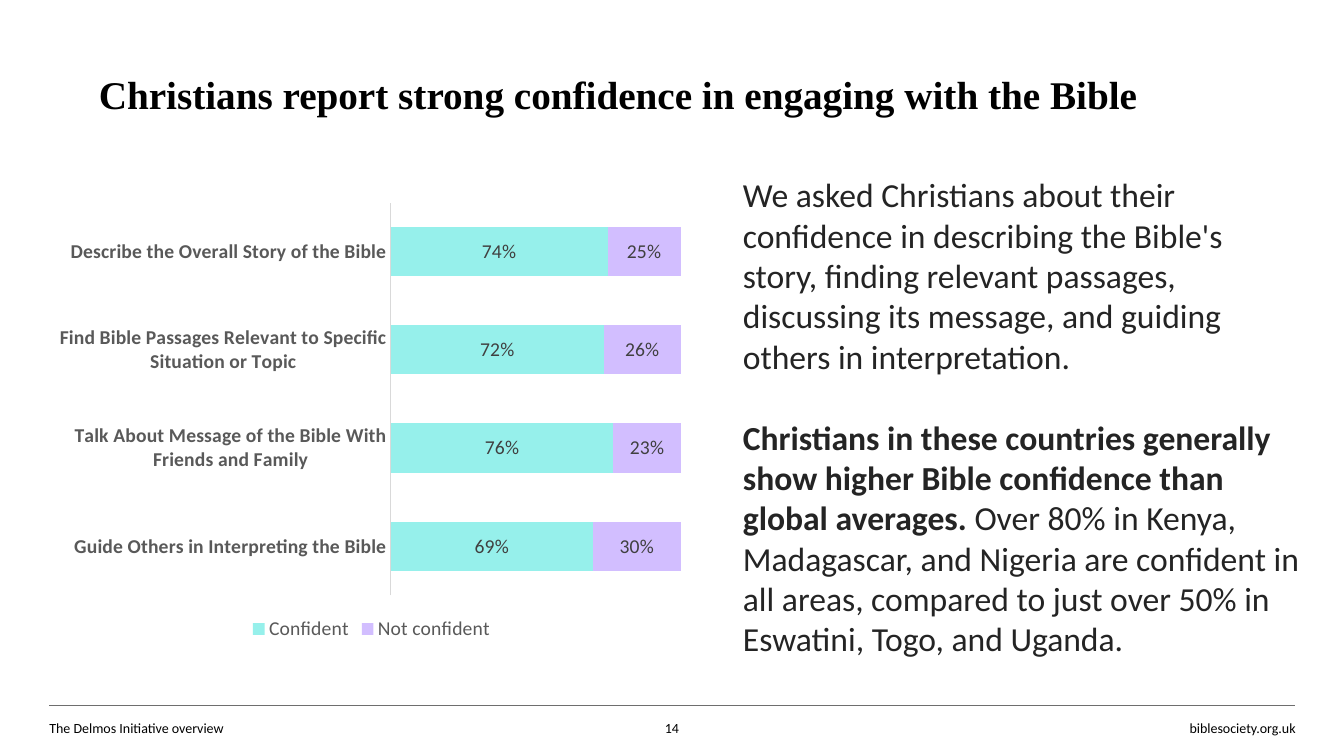
from lxml import etree
from pptx import Presentation
from pptx.chart.data import CategoryChartData
from pptx.dml.color import RGBColor
from pptx.enum import chart as ch, shapes, text
from pptx.oxml import parse_xml
from pptx.oxml.ns import nsdecls, qn
from pptx.util import Inches, Pt

BLACK = RGBColor(0x00, 0x00, 0x00)
BODY = RGBColor(0x24, 0x24, 0x24)
RULE = RGBColor(0x6E, 0x6E, 0x6E)
AXIS_TEXT = RGBColor(0x59, 0x59, 0x59)
AXIS_LINE = RGBColor(0xD9, 0xD9, 0xD9)
LABEL = RGBColor(0x40, 0x40, 0x40)
AQUA = RGBColor(0x96, 0xF0, 0xEB)
LILAC = RGBColor(0xD2, 0xBE, 0xFF)

TITLE = "Christians report strong confidence in engaging with the Bible"
SKILLS = [
    "Describe the Overall Story of the Bible",
    "Find Bible Passages Relevant to Specific Situation or Topic",
    "Talk About Message of the Bible With Friends and Family",
    "Guide Others in Interpreting the Bible",
]
ANSWERS = [
    ("Confident", (0.74, 0.72, 0.76, 0.69), AQUA),
    ("Not confident", (0.25, 0.26, 0.23, 0.30), LILAC),
]
# Each paragraph is a list of (text, bold) runs
FINDINGS = [
    [("We asked Christians about their confidence in describing the Bible's story, "
      "finding relevant passages, discussing its message, and guiding others in "
      "interpretation.", False)],
    [("Christians in these countries generally show higher Bible confidence than "
      "global averages. ", True),
     ("Over 80% in Kenya, Madagascar, and Nigeria are confident in all areas, "
      "compared to just over 50% in Eswatini, Togo, and Uganda.", False)],
]
# text, left, width, alignment
FOOTER = [
    ("The Delmos Initiative overview", 0.49, 4.5, text.PP_ALIGN.LEFT),
    ("14", 6.45, 0.43, text.PP_ALIGN.CENTER),
    ("biblesociety.org.uk", 11.57, 1.28, text.PP_ALIGN.RIGHT),
]
FOOTER_TOP, FOOTER_HEIGHT = 7.14, 0.17
CHART_BOX = (0.49, 1.92, 6.39, 4.48)
PLOT_SHARE = {"x": 0.53, "y": 0.02, "w": 0.45, "h": 0.87}


def set_font(font, size, color, bold=False, name="Calibri"):
    font.size, font.bold, font.name = Pt(size), bold, name
    font.color.rgb = color


def add_text(slide, box, paragraphs, size, color=BLACK, name="Calibri",
             align=text.PP_ALIGN.LEFT, anchor=text.MSO_ANCHOR.MIDDLE,
             margins=(0, 0), gap=0):
    """Add paragraphs of (text, bold) runs; margins are horizontal and vertical."""
    frame = slide.shapes.add_textbox(*map(Inches, box)).text_frame
    frame.word_wrap = True
    frame.vertical_anchor = anchor
    frame.margin_left = frame.margin_right = Inches(margins[0])
    frame.margin_top = frame.margin_bottom = Inches(margins[1])
    for index, runs in enumerate(paragraphs):
        paragraph = frame.add_paragraph() if index else frame.paragraphs[0]
        paragraph.alignment = align
        if index:
            paragraph.space_before = Pt(gap)
        for words, bold in runs:
            run = paragraph.add_run()
            run.text = words
            set_font(run.font, size, color, bold, name)


def fix_plot_area(chart):
    """Give the inner plot area a set share of the chart."""
    shares = "".join(f'<c:{key} val="{value}"/>' for key, value in PLOT_SHARE.items())
    layout = parse_xml(
        f'<c:layout {nsdecls("c")}><c:manualLayout><c:layoutTarget val="inner"/>'
        f'<c:xMode val="edge"/><c:yMode val="edge"/>{shares}</c:manualLayout></c:layout>')
    area = chart.element.find(".//" + qn("c:plotArea"))
    for automatic in area.findall(qn("c:layout")):
        area.remove(automatic)
    area.insert(0, layout)


def add_confidence_chart(slide):
    data = CategoryChartData(number_format="0%")
    data.categories = SKILLS
    for answer, shares, _ in ANSWERS:
        data.add_series(answer, shares)
    chart = slide.shapes.add_chart(
        ch.XL_CHART_TYPE.BAR_STACKED_100, *map(Inches, CHART_BOX), data).chart
    set_font(chart.font, 10, BLACK)
    chart.has_title = False
    chart.has_legend = True
    chart.legend.position = ch.XL_LEGEND_POSITION.BOTTOM
    chart.legend.include_in_layout = False
    set_font(chart.legend.font, 14, AXIS_TEXT)

    skills = chart.category_axis
    skills.reverse_order = True
    skills.major_tick_mark = ch.XL_TICK_MARK.NONE
    skills.format.line.color.rgb = AXIS_LINE
    skills.format.line.width = Pt(0.75)
    set_font(skills.tick_labels.font, 14, AXIS_TEXT, bold=True)
    chart.value_axis.visible = False
    chart.value_axis.has_major_gridlines = False

    plot = chart.plots[0]
    plot.vary_by_categories = False
    plot.gap_width, plot.overlap = 100, 100
    for series, (_, _, color) in zip(plot.series, ANSWERS):
        series.format.fill.solid()
        series.format.fill.fore_color.rgb = color
        labels = series.data_labels
        labels.show_value = True
        labels.position = ch.XL_LABEL_POSITION.CENTER
        labels.number_format, labels.number_format_is_linked = "0%", False
        set_font(labels.font, 14, LABEL)
    fix_plot_area(chart)


def main():
    deck = Presentation()
    deck.slide_width, deck.slide_height = Inches(13.33), Inches(7.5)
    slide = deck.slides.add_slide(deck.slide_layouts[6])

    rule = slide.shapes.add_connector(
        shapes.MSO_CONNECTOR.STRAIGHT, *map(Inches, (0.49, 7, 12.84, 7)))
    rule.line.color.rgb = RULE
    rule.line.width = Pt(0.5)
    etree.SubElement(rule.element.spPr, qn("a:effectLst"))

    add_text(slide, (0.98, 0.7, 10.63, 0.47), [[(TITLE, True)]], 28,
             name="Times New Roman")
    for words, left, width, align in FOOTER:
        add_text(slide, (left, FOOTER_TOP, width, FOOTER_HEIGHT),
                 [[(words, False)]], 10, align=align)
    add_confidence_chart(slide)
    add_text(slide, (7.27, 1.68, 5.74, 4.95), FINDINGS, 24, color=BODY,
             anchor=text.MSO_ANCHOR.TOP, margins=(0.1, 0.05), gap=29)
    deck.save("out.pptx")


if __name__ == "__main__":
    main()
